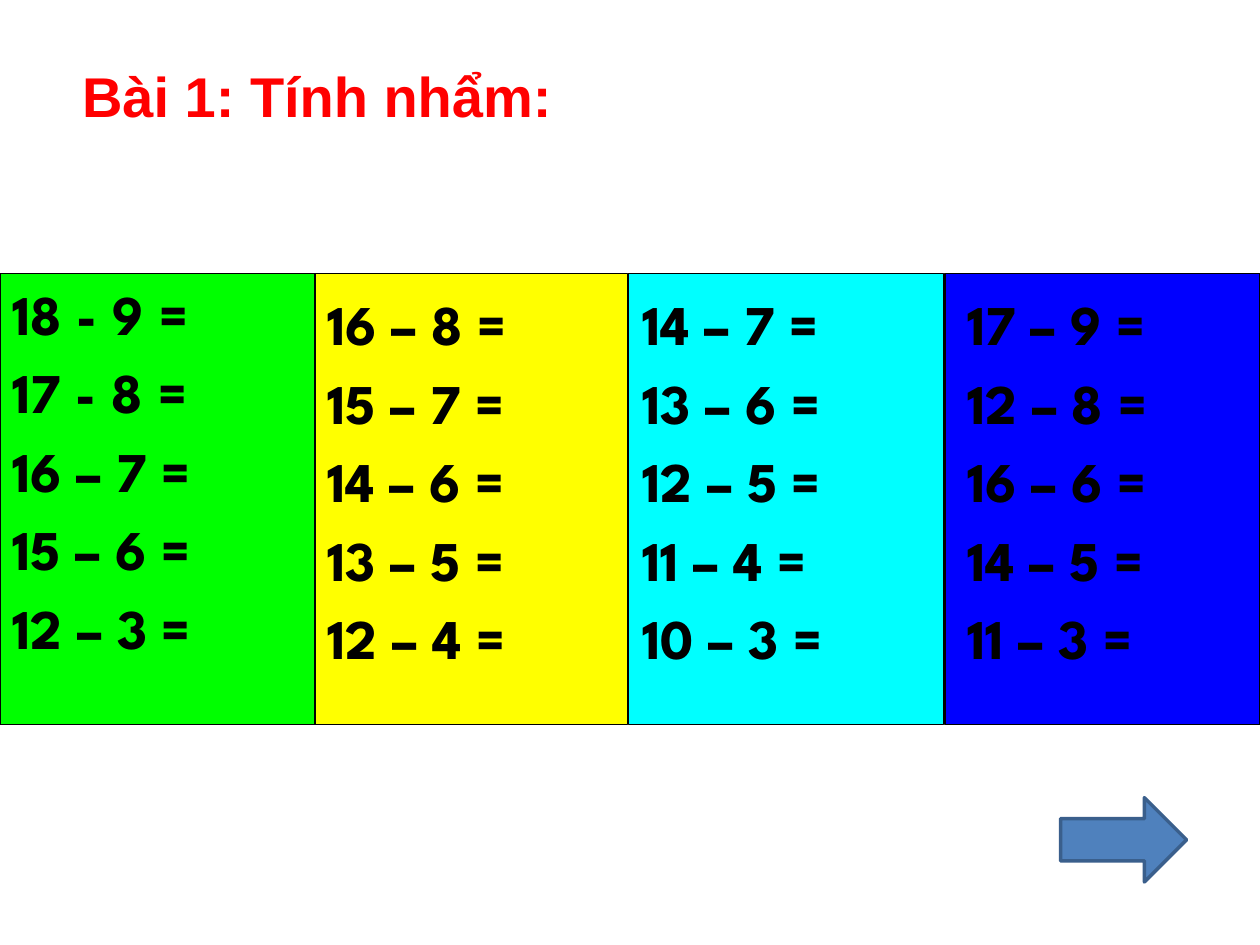
from pptx import Presentation
from pptx.dml.color import RGBColor
from pptx.enum import shapes, text
from pptx.util import Cm, Pt

RED = RGBColor(0xFF, 0x00, 0x00)
BLACK = RGBColor(0x00, 0x00, 0x00)
GREEN = RGBColor(0x00, 0xFF, 0x00)
YELLOW = RGBColor(0xFF, 0xFF, 0x00)
CYAN = RGBColor(0x00, 0xFF, 0xFF)
BLUE = RGBColor(0x00, 0x00, 0xFF)
STEEL = RGBColor(0x4F, 0x81, 0xBD)
DARK_STEEL = RGBColor(0x3A, 0x5F, 0x8C)

TITLE_FONT = {"name": "Arial", "size": Pt(32), "bold": True}
SUM_FONT = {"name": "League Spartan", "size": Pt(32), "bold": True}


def add_filled(kind, left, top, width, height, fill, line, line_width):
    shape = page.shapes.add_shape(kind, Cm(left), Cm(top), Cm(width), Cm(height))
    shape.shadow.inherit = False
    shape.fill.solid()
    shape.fill.fore_color.rgb = fill
    shape.line.color.rgb = line
    shape.line.width = Pt(line_width)


def format_font(font, values, color):
    for name, value in values.items():
        setattr(font, name, value)
    font.color.rgb = color


deck = Presentation()
deck.slide_width, deck.slide_height = Cm(25.4), Cm(19.05)
page = deck.slides.add_slide(deck.slide_layouts[5])

# Title
title = page.shapes.title
title.left, title.top, title.width, title.height = Cm(1.4), Cm(1.12), Cm(14.17), Cm(1.63)
frame = title.text_frame
frame.text = "Bài 1: Tính nhẩm:"
frame.vertical_anchor = text.MSO_ANCHOR.TOP
frame.auto_size = text.MSO_AUTO_SIZE.SHAPE_TO_FIT_TEXT
frame.paragraphs[0].alignment = text.PP_ALIGN.LEFT
format_font(frame.paragraphs[0].runs[0].font, TITLE_FONT, RED)

# Next arrow
add_filled(shapes.MSO_SHAPE.RIGHT_ARROW, 21.38, 16.08, 2.54, 1.7, STEEL, DARK_STEEL, 2)

# Columns: panel left, fill, text left, text top, sums (green overlaps yellow)
columns = [
    (6.3, YELLOW, 6.35, 5.72,
     ["16 – 8 =", "15 – 7 =", "14 – 6 =", "13 – 5 =", "12 – 4 ="]),
    (12.67, CYAN, 12.7, 5.72,
     ["14 – 7 =", "13 – 6 =", "12 – 5 =", "11 – 4 =", "10 – 3 ="]),
    (19.05, BLUE, 19.25, 5.72,
     ["17 – 9 =", "12 – 8 =", "16 – 6 =", "14 – 5 =", "11 – 3 ="]),
    (0, GREEN, 0, 5.51,
     ["18 - 9 =", "17 - 8 =", "16 – 7 =", "15 – 6 =", "12 – 3 ="]),
]
for panel_left, fill, text_left, text_top, sums in columns:
    add_filled(shapes.MSO_SHAPE.RECTANGLE, panel_left, 5.51, 6.35, 9.1, fill, BLACK, 0.75)
    box = page.shapes.add_textbox(Cm(text_left), Cm(text_top), Cm(6.15), Cm(3.6))
    frame = box.text_frame
    frame.word_wrap = True
    for index, sum_text in enumerate(sums):
        para = frame.add_paragraph() if index else frame.paragraphs[0]
        if index:
            para.space_before = Pt(6.4)
        span = para.add_run()
        span.text = sum_text
        format_font(span.font, SUM_FONT, BLACK)

deck.save("out.pptx")
